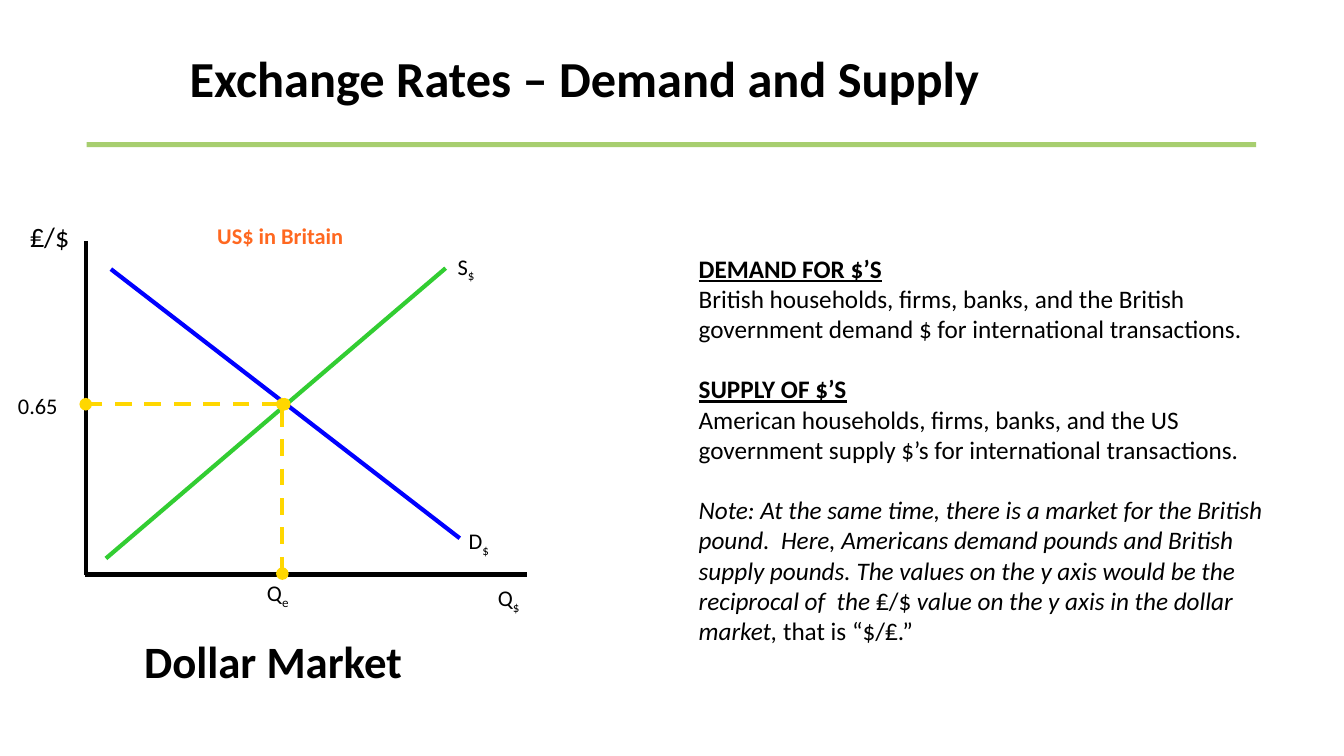
from dataclasses import dataclass

from lxml.etree import SubElement
from pptx import Presentation
from pptx.dml.color import RGBColor
from pptx.enum.dml import MSO_LINE
from pptx.enum.shapes import MSO_CONNECTOR, MSO_SHAPE
from pptx.enum.text import MSO_ANCHOR, MSO_AUTO_SIZE, PP_ALIGN
from pptx.oxml.ns import qn
from pptx.util import Inches, Pt


@dataclass(frozen=True)
class Theme:
    font: str = "Calibri"
    ink: str = "000000"
    rule: str = "A7CE6F"
    accent: str = "FF6820"
    demand: str = "0000FF"
    supply: str = "32CD32"
    guide: str = "FFD700"
    title: int = 36
    market: int = 32
    unit: int = 20
    body: int = 18
    label: int = 16
    line: int = 3
    gap: float = 21.5


THEME = Theme()
WIDE, HIGH = Inches(13.33), Inches(7.5)
LABEL_H = 4.93


def col(share):
    return round(WIDE * share / 100)


def row(share):
    return round(HIGH * share / 100)


def area(left, top, width, height):
    return col(left), row(top), col(width), row(height)


def add_run(para, text, size, color=THEME.ink, bold=False, italic=False,
            under=False, sub=False):
    run = para.add_run()
    run.text = text
    font = run.font
    font.name, font.size = THEME.font, Pt(size)
    font.bold, font.italic, font.underline = bold, italic, under
    font.color.rgb = RGBColor.from_string(color)
    if sub:
        run._r.get_or_add_rPr().set("baseline", "-25000")


def set_frame(shape, inset=0.05):
    frame = shape.text_frame
    frame.word_wrap = True
    frame.auto_size = MSO_AUTO_SIZE.NONE
    frame.vertical_anchor = MSO_ANCHOR.TOP
    frame.margin_left = frame.margin_right = Inches(inset)
    frame.margin_top = frame.margin_bottom = Inches(0.05)
    return frame


def add_box(slide, place, inset=0.05):
    return set_frame(slide.shapes.add_textbox(*area(*place)), inset)


def add_label(slide, place, text, sub="", size=THEME.label):
    para = add_box(slide, place, 0.1).paragraphs[0]
    add_run(para, text, size)
    if sub:
        add_run(para, sub, size, sub=True)


def add_line(slide, start, end, color, guide=False):
    line = slide.shapes.add_connector(
        MSO_CONNECTOR.STRAIGHT,
        col(start[0]), row(start[1]), col(end[0]), row(end[1]))
    line.line.width = Pt(THEME.line)
    line.line.color.rgb = RGBColor.from_string(color)
    if guide:
        line.line.dash_style = MSO_LINE.DASH
        for tag in ("a:headEnd", "a:tailEnd"):
            SubElement(line.line._get_or_add_ln(), qn(tag), type="oval")
    SubElement(line._element.spPr, qn("a:effectLst"))


def add_title(slide):
    title = slide.shapes.title
    title.left, title.top, title.width, title.height = area(
        13.73, 5.6, 63.84, 9.47)
    para = set_frame(title).paragraphs[0]
    para.alignment = PP_ALIGN.LEFT
    add_run(para, "Exchange Rates – Demand and Supply", THEME.title, bold=True)


def add_rule(slide):
    rule = slide.shapes.add_shape(
        MSO_SHAPE.RECTANGLE, *area(6.45, 18.8, 87.02, 0.67))
    rule.shadow.inherit = False
    rule.fill.solid()
    rule.fill.fore_color.rgb = RGBColor.from_string(THEME.rule)
    rule.line.fill.background()


def add_graph(slide):
    left, base, price = 6.38, 76, 53.47
    add_line(slide, (left, 31.87), (left, base), THEME.ink)
    add_line(slide, (6.3, base), (39.23, base), THEME.ink)

    para = add_box(slide, (11.48, 28.67, 18.75, LABEL_H), 0.1).paragraphs[0]
    para.alignment = PP_ALIGN.CENTER
    add_run(para, "US$ in Britain", THEME.label, THEME.accent, bold=True)
    add_label(slide, (1.5, 28.4, 6.45, 5.87), "₤/$", size=THEME.unit)

    add_line(slide, (8.25, 35.6), (34.21, 71.2), THEME.demand)
    add_line(slide, (7.88, 73.87), (33.16, 35.47), THEME.supply)
    add_line(slide, (21.16, price), (left, price), THEME.guide, True)
    add_line(slide, (21.01, price), (21.01, 75.87), THEME.guide, True)

    for x, y, width, text, sub in (
        (34.13, 69.07, 6.23, "D", "$"),
        (33.31, 32.8, 6.23, "S", "$"),
        (19.13, 76, 4.95, "Q", "e"),
        (36.31, 76.67, 4.95, "Q", "$"),
        (0.6, 51.2, 8.1, "0.65", ""),
    ):
        add_label(slide, (x, y, width, LABEL_H), text, sub)

    name = add_box(slide, (10.35, 83.2, 31.13, 8.53)).paragraphs[0]
    add_run(name, "Dollar Market", THEME.market, bold=True)


def add_notes(slide):
    head = {"bold": True, "under": True}
    slant = {"italic": True}
    paras = (
        (False, [("DEMAND FOR $’S", head)]),
        (False, [("British households, firms, banks, and the British "
                  "government demand $ for international transactions.", {})]),
        (True, [("SUPPLY OF $’S", head)]),
        (False, [("American households, firms, banks, and the US "
                  "government supply $’s for international transactions.", {})]),
        (True, [("Note: At the same time, there is a market for the British "
                 "pound.  Here, Americans demand pounds and British supply "
                 "pounds. The values on the y axis would be the reciprocal "
                 "of  the ", slant),
                ("₤/$", {}),
                (" value on the y axis in the dollar market,", slant),
                (" that is “$/₤.”", {})]),
    )
    frame = add_box(slide, (51.61, 32.8, 42.76, 66))
    for index, (gap, runs) in enumerate(paras):
        para = frame.add_paragraph() if index else frame.paragraphs[0]
        if gap:
            para.space_before = Pt(THEME.gap)
        for text, style in runs:
            add_run(para, text, THEME.body, **style)


def main():
    deck = Presentation()
    deck.slide_width, deck.slide_height = WIDE, HIGH
    slide = deck.slides.add_slide(deck.slide_layouts[5])
    add_rule(slide)
    add_graph(slide)
    add_title(slide)
    add_notes(slide)
    deck.save("out.pptx")


if __name__ == "__main__":
    main()
